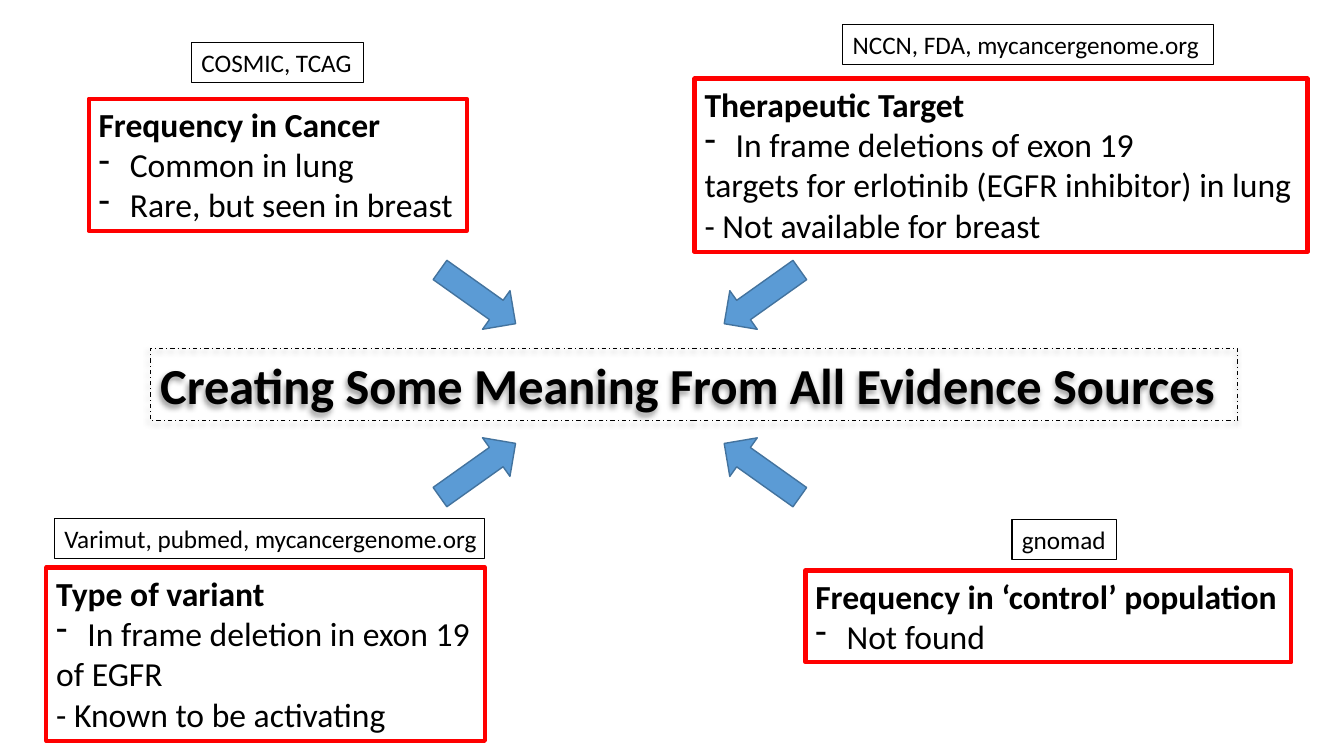
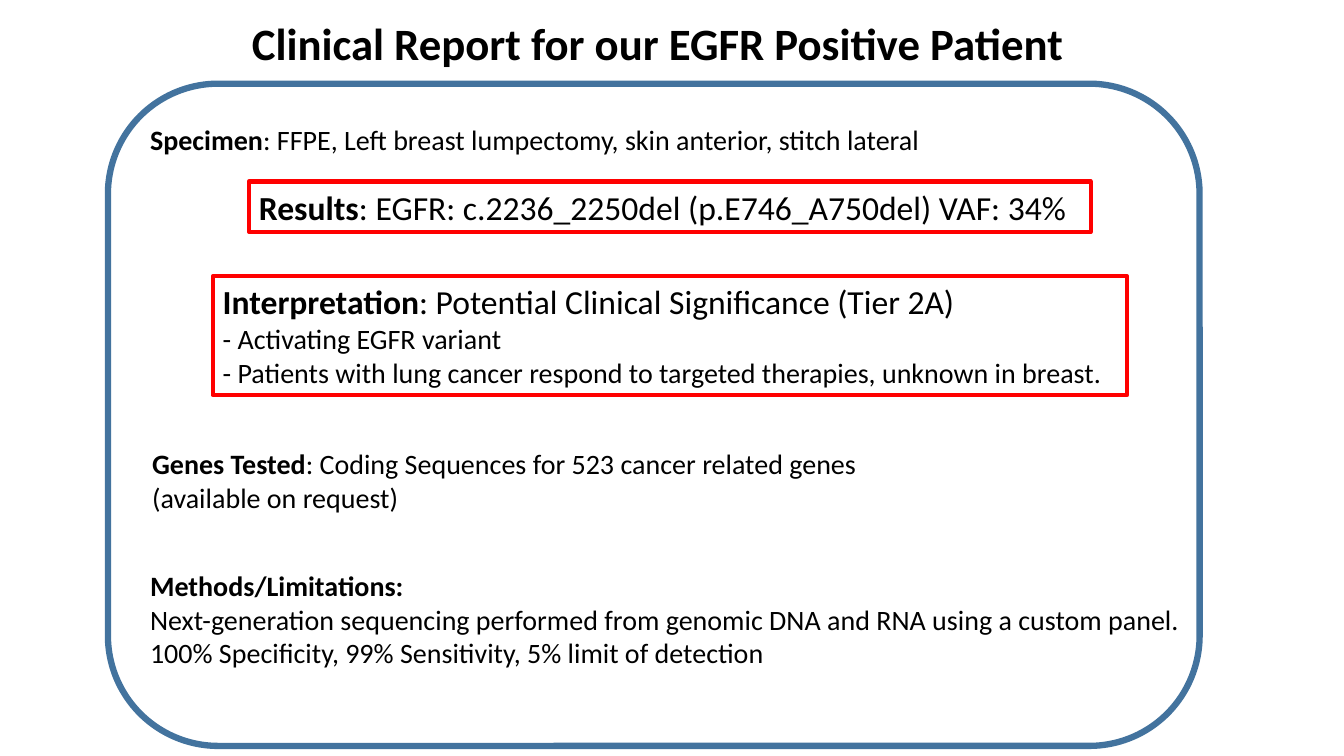
from lxml import etree
from pptx import Presentation
from pptx import util as u
from pptx.dml.color import RGBColor
from pptx.enum import dml, shapes, text
from pptx.oxml import ns

COLORS = {"ink": "000000", "paper": "FFFFFF", "alert": "FF0000",
          "arrow": "5B9BD5", "edge": "43739E"}
FONT = "Calibri"
INDENT = u.Inches(0.31)

presentation = Presentation()
presentation.slide_width = u.Inches(13.333)
presentation.slide_height = u.Inches(7.5)
BLANK = presentation.slide_layouts[6]


def place(left, top, width, height):
    """Turn percentages of the slide's size into lengths."""
    across, down = presentation.slide_width / 100, presentation.slide_height / 100
    return [u.Emu(round(length)) for length in
            (left * across, top * down, width * across, height * down)]


def add_text(slide, box, lines, size=20, rest_size=None, bullets=0,
             line=None, weight=0.75):
    """Add a text box; each line is a (bold, plain) pair.

    The lines after the first may have their own size, and the first few
    of them may carry a dash as bullet.
    """
    shape = slide.shapes.add_textbox(*place(*box))
    if line:
        shape.line.color.rgb = RGBColor.from_string(COLORS[line])
        shape.line.width = u.Pt(weight)
    frame = shape.text_frame
    frame.word_wrap = True
    frame.margin_right = 0
    for number, parts in enumerate(lines):
        paragraph = frame.add_paragraph() if number else frame.paragraphs[0]
        if 0 < number <= bullets:
            properties = paragraph._p.get_or_add_pPr()
            properties.set("marL", str(INDENT))
            properties.set("indent", str(-INDENT))
            etree.SubElement(properties, ns.qn("a:buFontTx"))
            etree.SubElement(properties, ns.qn("a:buChar"), char="-")
        for part, bold in zip(parts, (True, False)):
            if part:
                run = paragraph.add_run()
                run.text = part
                run.font.name = FONT
                run.font.size = u.Pt(rest_size if number and rest_size else size)
                run.font.bold = bold
                run.font.color.rgb = RGBColor.from_string(COLORS["ink"])
    return shape


# Slide 1: four kinds of evidence around a central message
slide = presentation.slides.add_slide(BLANK)
banner = add_text(slide, (11.18, 46.13, 80.93, 9.47),
                  [("Creating Some Meaning From All Evidence Sources", "")],
                  size=36, line="ink")
banner.line.dash_style = dml.MSO_LINE.DASH_DOT

# Soft shadow under the central message
effects = etree.SubElement(banner._element.spPr, ns.qn("a:effectLst"))
shadow = etree.SubElement(effects, ns.qn("a:outerShdw"), blurRad=str(u.Pt(4)),
                          dist=str(u.Pt(3)), dir=str(135 * 60000),
                          algn="tr", rotWithShape="0")
shade = etree.SubElement(shadow, ns.qn("a:srgbClr"), val=COLORS["ink"])
etree.SubElement(shade, ns.qn("a:alpha"), val="40000")

# Evidence boxes: place, heading, points, number of bulleted points
evidence = [
    ((6.6, 13.07, 28.13, 17.47), "Frequency in Cancer",
     ["Common in lung", "Rare, but seen in breast"], 2),
    ((51.68, 10.4, 45.6, 22.93), "Therapeutic Target",
     ["In frame deletions of exon 19",
      "targets for erlotinib (EGFR inhibitor) in lung",
      "- Not available for breast"], 1),
    ((3.45, 75.07, 32.63, 22.93), "Type of variant",
     ["In frame deletion in exon 19", "of EGFR", "- Known to be activating"], 1),
    ((59.93, 75.47, 36.15, 12.13), "Frequency in ‘control’ population",
     ["Not found"], 1),
]
for box, heading, points, bullets in evidence:
    add_text(slide, box, [(heading, "")] + [("", point) for point in points],
             size=24, bullets=bullets, line="alert", weight=3)

# Source labels, all one row high
sources = [
    (14.25, 5.6, 12.83, "COSMIC, TCAG"),
    (62.7, 3.2, 27.6, "NCCN, FDA, mycancergenome.org"),
    (75.3, 68.67, 7.8, "gnomad"),
    (4.05, 68.53, 32.03, "Varimut, pubmed, mycancergenome.org"),
]
for left, top, width, label in sources:
    add_text(slide, (left, top, width, 5.33), [("", label)], size=18, line="ink")

# Arrows pointing at the central message
TILT = 35.4
arrows = [(32.1, 36.13, TILT), (53.25, 36.13, 180 - TILT),
          (32.1, 59.07, 360 - TILT), (53.25, 59.07, 180 + TILT)]
for left, top, rotation in arrows:
    arrow = slide.shapes.add_shape(shapes.MSO_SHAPE.RIGHT_ARROW,
                                   *place(left, top, 6.9, 6.27))
    arrow.rotation = rotation
    arrow.shadow.inherit = False
    arrow.fill.solid()
    arrow.fill.fore_color.rgb = RGBColor.from_string(COLORS["arrow"])
    arrow.line.color.rgb = RGBColor.from_string(COLORS["edge"])
    arrow.line.width = u.Pt(1)

# Slide 2: the clinical report
slide = presentation.slides.add_slide(BLANK)
add_text(slide, (18, 1.47, 63.3, 8.53),
         [("Clinical Report for our EGFR Positive Patient", "")], size=32)

# Rounded report sheet
sheet = slide.shapes.add_shape(shapes.MSO_SHAPE.ROUNDED_RECTANGLE,
                               *place(8.03, 11.07, 81.23, 87.6))
sheet.shadow.inherit = False
sheet.fill.solid()
sheet.fill.fore_color.rgb = RGBColor.from_string(COLORS["paper"])
sheet.line.color.rgb = RGBColor.from_string(COLORS["edge"])
sheet.line.width = u.Pt(4.5)

# Plain sections
sections = [
    ((10.43, 15.6, 59.85, 5.87),
     [("Specimen", ": FFPE, Left breast lumpectomy, skin anterior, stitch lateral")]),
    ((10.43, 74.53, 78.83, 14.8),
     [("Methods/Limitations:", ""),
      ("", "Next-generation sequencing performed from genomic DNA and RNA "
           "using a custom panel."),
      ("", "100% Specificity, 99% Sensitivity, 5% limit of detection")]),
    ((10.58, 58.4, 54.38, 10.27),
     [("Genes Tested", ": Coding Sequences for 523 cancer related genes"),
      ("", "(available on request)")]),
]
for box, lines in sections:
    add_text(slide, box, lines)

# Highlighted sections
highlights = [
    ((18.53, 24, 62.63, 6.67),
     [("Results", ": EGFR: c.2236_2250del (p.E746_A750del) VAF: 34%")]),
    ((15.83, 36.53, 68.03, 15.73),
     [("Interpretation", ": Potential Clinical Significance (Tier 2A)"),
      ("", "- Activating EGFR variant"),
      ("", "- Patients with lung cancer respond to targeted therapies, "
           "unknown in breast.")]),
]
for box, lines in highlights:
    add_text(slide, box, lines, size=24, rest_size=20, line="alert", weight=3)

presentation.save("out.pptx")
